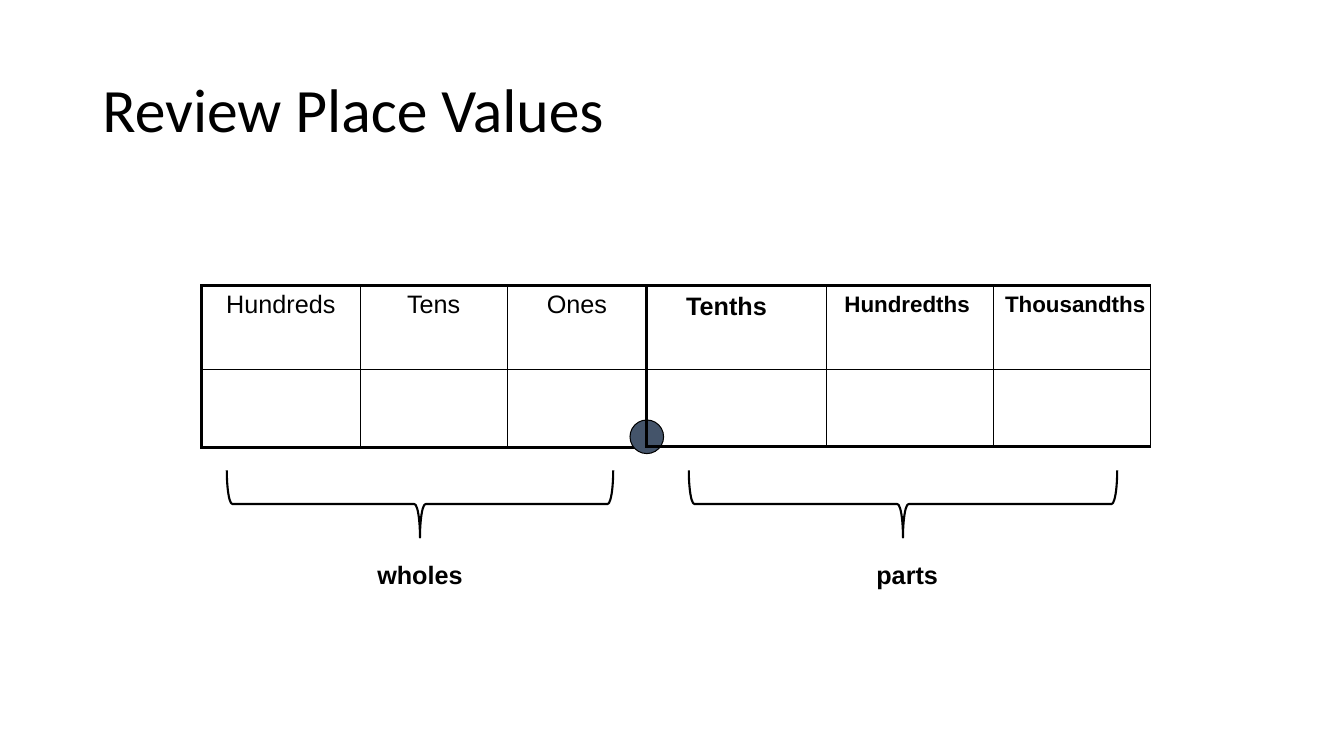
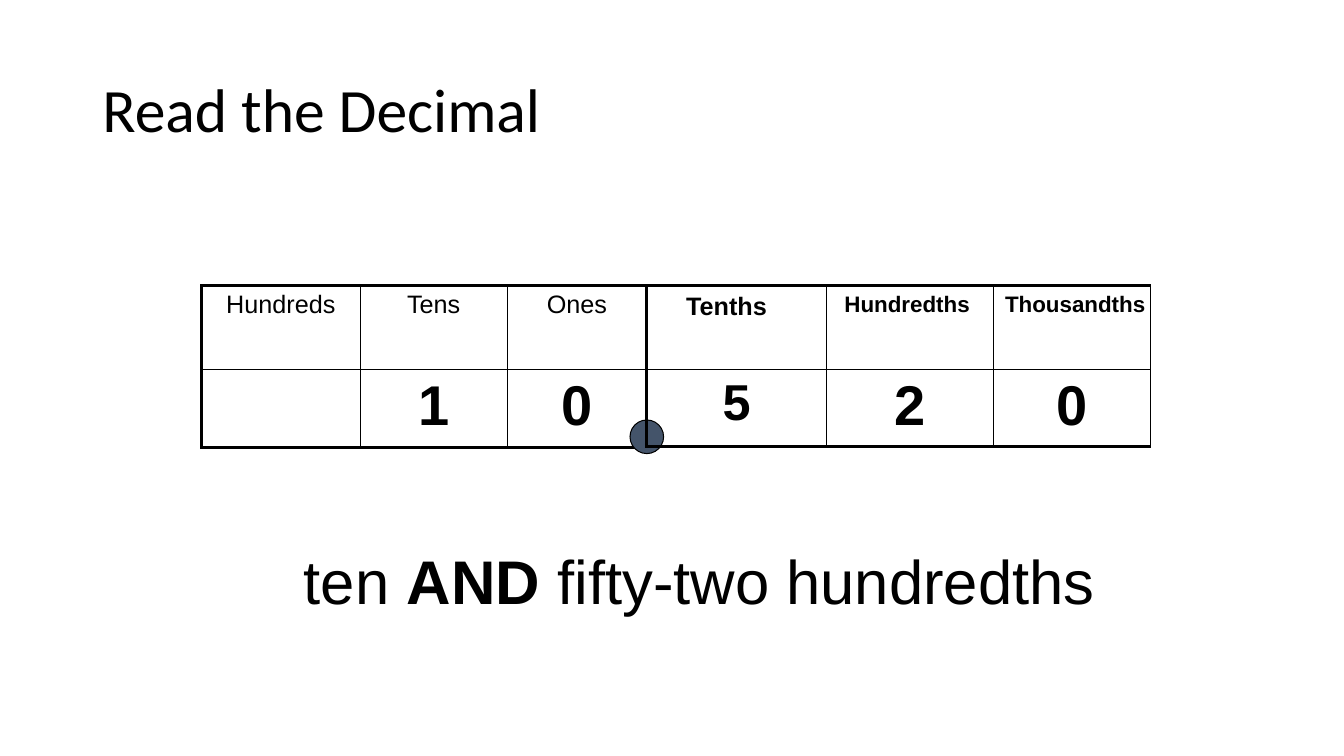
from lxml.etree import SubElement as Sub
from pptx import Presentation as Deck
from pptx.dml.color import RGBColor as Rgb
from pptx.enum.shapes import MSO_SHAPE as Kind
from pptx.enum.text import MSO_ANCHOR as Anchor, MSO_AUTO_SIZE as Auto, PP_ALIGN as Align
from pptx.oxml.ns import qn
from pptx.util import Emu, Pt

PX = 9525
HUES = {"ink": "000000", "dot": "44546A"}
THIN, THICK = 1, 2.25
TITLE = {"name": "Calibri", "size": Pt(44), "bold": False}
HEAD = {"name": "Arial", "size": Pt(18), "bold": False}
LABEL = {**HEAD, "bold": True}
SMALL = {**LABEL, "size": Pt(16)}
DIGIT = {**LABEL, "size": Pt(40)}
TENTH = {**LABEL, "size": Pt(36)}
READ = {**HEAD, "size": Pt(44)}


def px(*vals):
    """Turn px lengths into EMU."""
    return [Emu(v * PX) for v in vals]


def hue(key):
    """Look up a named colour."""
    return Rgb.from_string(HUES[key])


def fit(obj, vals):
    """Set attributes from a dict."""
    for key, val in vals.items():
        setattr(obj, key, val)


def put(frame, runs, style, align=Align.CENTER):
    """Write runs of (text, extra format) as one paragraph."""
    para = frame.paragraphs[0]
    para.alignment = align
    for text, extra in runs:
        run = para.add_run()
        run.text = text
        fit(run.font, {**style, **extra})
        run.font.color.rgb = hue("ink")
    return para


def head(slide, text):
    """Place and format the slide title."""
    title = slide.shapes.title
    fit(title, dict(zip(("left", "top", "width", "height"), px(88, 38, 1104, 139))))
    fit(title.text_frame, {"word_wrap": True, "auto_size": Auto.NONE,
                           "vertical_anchor": Anchor.MIDDLE})
    put(title.text_frame, [(text, {})], TITLE, Align.LEFT).line_spacing = 0.9


def note(slide, box, runs, style, align=Align.CENTER):
    """Add a wrapping text box."""
    frame = slide.shapes.add_textbox(*px(*box)).text_frame
    frame.word_wrap = True
    put(frame, runs, style, align)


def mark(slide, kind, box, width, fill=None):
    """Add an outlined shape, filled if a colour is named."""
    shape = slide.shapes.add_shape(kind, *px(*box))
    shape.shadow.inherit = False
    if fill:
        shape.fill.solid()
        shape.fill.fore_color.rgb = hue(fill)
    else:
        shape.fill.background()
    shape.line.color.rgb = hue("ink")
    shape.line.width = Pt(width)
    return shape


def edge(cell, sides):
    """Draw cell borders, then clear the fill."""
    props = cell._tc.get_or_add_tcPr()
    for side, width in sides.items():
        line = Sub(props, qn("a:ln" + side), w=str(int(Pt(width))))
        fill = Sub(line, qn("a:solidFill"))
        Sub(fill, qn("a:srgbClr"), val=HUES["ink"])
    cell.fill.background()


def grid(slide, left, top, cols, rows, data, styles):
    """Add a ruled table with thick left, top and bottom edges."""
    box = px(left, top, sum(cols), sum(rows))
    table = slide.shapes.add_table(len(rows), len(cols), *box).table
    fit(table, {"first_row": False, "horz_banding": False})
    for col, width in zip(table.columns, px(*cols)):
        col.width = width
    for row, height in zip(table.rows, px(*rows)):
        row.height = height
    for r in range(len(rows)):
        for c in range(len(cols)):
            cell = table.cell(r, c)
            edge(cell, {"L": THIN if c else THICK, "R": THIN,
                        "T": THIN if r else THICK,
                        "B": THICK if r == len(rows) - 1 else THIN})
            if data[r][c]:
                put(cell.text_frame, [(data[r][c], {})], styles[r][c])


def chart(slide, left, top, digits):
    """Build the place value chart around its decimal point."""
    whole, part = (151, 140, 133), (171, 159, 150)
    mid = left + sum(whole)
    grid(slide, left, top, whole, (80, 74),
         [("Hundreds", "Tens", "Ones"), digits[:3]], [[HEAD] * 3, [DIGIT] * 3])
    mark(slide, Kind.OVAL, (mid - 16, top + 128, 32, 32), 0.75, "dot")
    grid(slide, mid, top, part, (80, 73),
         [("",) * 3, digits[3:]], [[LABEL] * 3, [TENTH, DIGIT, DIGIT]])
    for text, x, width, style in (("Tenths", 8, 136, LABEL),
                                  ("Hundredths", 168, 160, SMALL),
                                  ("Thousandths", 328, 160, SMALL)):
        note(slide, (mid + x, top, width, 38), [(text, {})], style)


def brace(slide, left, top, width, depth):
    """Lay a brace under a span, pointing down."""
    box = (left + (width - depth) // 2, top - (width - depth) // 2, depth, width)
    mark(slide, Kind.LEFT_BRACE, box, 1.5).rotation = 270


def page(deck, title, digits):
    """Add a slide with a title and a place value chart."""
    slide = deck.slides.add_slide(deck.slide_layouts[5])
    head(slide, title)
    chart(slide, 192, 272, digits)
    return slide


def main():
    """Build and save the deck."""
    deck = Deck()
    fit(deck, dict(zip(("slide_width", "slide_height"), px(1280, 720))))

    slide = page(deck, "Review Place Values", ("",) * 6)
    for text, left, width, x in (("wholes", 216, 368, 288), ("parts", 656, 408, 752)):
        brace(slide, left, 448, width, 64)
        note(slide, (x, 528, 224, 38), [(text, {})], LABEL)

    slide = page(deck, "Read the Decimal", ("", "1", "0", "5", "2", "0"))
    note(slide, (280, 512, 784, 80),
         [("ten ", {}), ("AND", {"bold": True}), (" fifty-two hundredths", {})],
         READ, Align.LEFT)

    deck.save("out.pptx")


if __name__ == "__main__":
    main()
